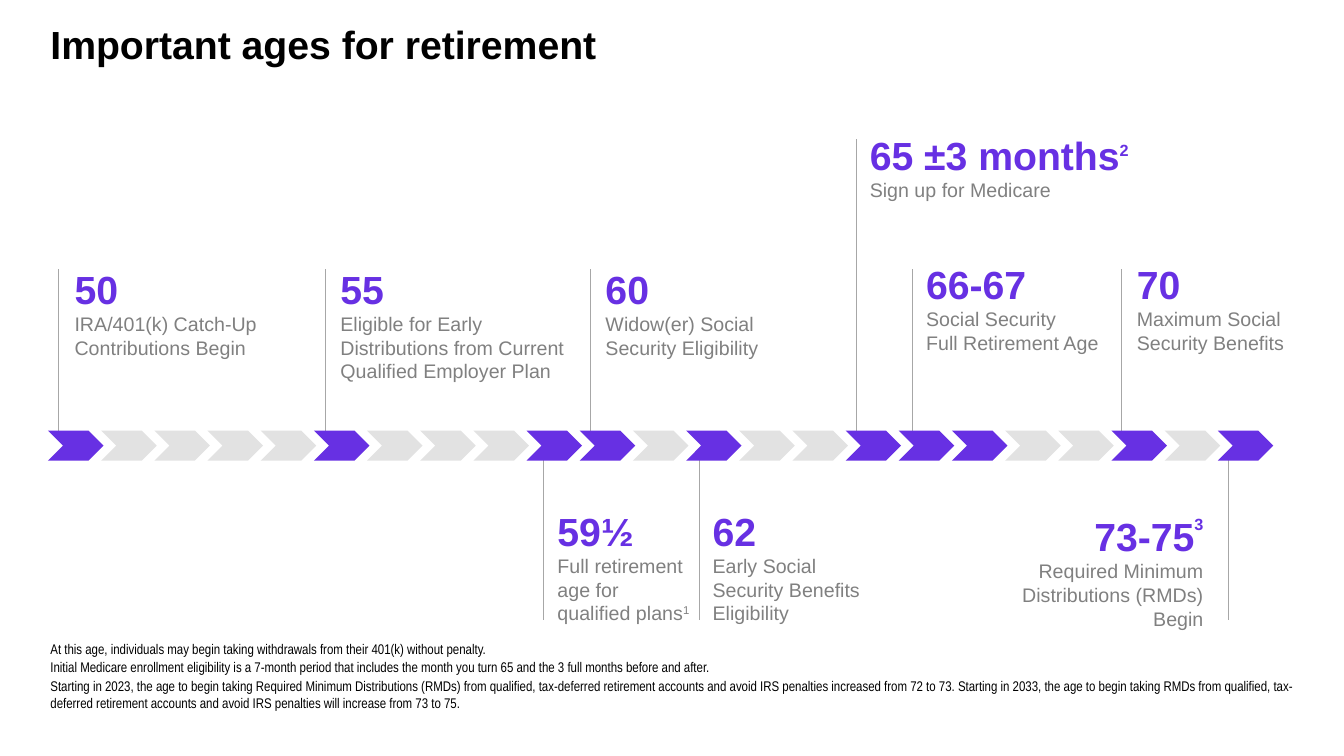
"""Build the slide about important ages for retirement."""
import dataclasses

import lxml.etree
import pptx
import pptx.dml.color
import pptx.enum.shapes
import pptx.enum.text
import pptx.oxml.ns
import pptx.util

Cm = pptx.util.Cm
Pt = pptx.util.Pt
Align = pptx.enum.text.PP_ALIGN
Anchor = pptx.enum.text.MSO_ANCHOR

PURPLE, LIGHT_GREY, LINE_GREY = "6730E3", "E2E2E2", "A7A7A7"
TEXT_GREY, BLACK, WHITE = "808080", "000000", "FFFFFF"
CHEVRON_COUNT, CHEVRON_LEFT, CHEVRON_TOP, CHEVRON_STEP = 23, 1.21, 10.85, 1.34
MARKED_CHEVRONS = {0, 5, 9, 10, 12, 15, 16, 17, 20, 22}
UPPER_TOP, MEDICARE_TOP, LOWER_TOP = 6.55, 3.18, 12.78
UPPER_LINE, LOWER_LINE, MEDICARE_LINE = (6.78, 10.85), (11.56, 15.62), (3.51, 10.97)


@dataclasses.dataclass
class Milestone:
    """An age on the timeline with its leader line and its label."""
    age: str
    description: str
    line_x: float
    line_span: tuple
    left: float
    top: float
    width: float
    boxed: bool = False
    age_mark: str = ""
    age_baseline: int = 50
    description_mark: str = ""
    alignment: Align = Align.LEFT


MILESTONES = [
    Milestone("50", "IRA/401(k) Catch-Up Contributions Begin",
              1.47, UPPER_LINE, 1.63, UPPER_TOP, 6.48),
    Milestone("55", "Eligible for Early Distributions from Current Qualified Employer Plan",
              8.2, UPPER_LINE, 8.33, UPPER_TOP, 6.76),
    Milestone("59½", "Full retirement age for qualified plans",
              13.69, LOWER_LINE, 14.05, LOWER_TOP, 3.4, boxed=True, description_mark="1"),
    Milestone("60", "Widow(er) Social Security Eligibility",
              14.88, UPPER_LINE, 15.01, UPPER_TOP, 4.95),
    Milestone("62", "Early Social Security Benefits Eligibility",
              17.63, LOWER_LINE, 17.96, LOWER_TOP, 3.96, boxed=True),
    Milestone("65 ±3 months", "Sign up for Medicare",
              21.59, MEDICARE_LINE, 21.67, MEDICARE_TOP, 7.49, age_mark="2"),
    Milestone("66-67", "Social Security \vFull Retirement Age",
              22.99, UPPER_LINE, 23.34, UPPER_TOP, 4.55, boxed=True),
    Milestone("70", "Maximum Social Security Benefits",
              28.27, UPPER_LINE, 28.65, UPPER_TOP, 4.32, boxed=True),
    Milestone("73-75", "Required Minimum Distributions (RMDs) Begin",
              30.96, LOWER_LINE, 25.17, LOWER_TOP, 5.41,
              age_mark="3", age_baseline=75, alignment=Align.RIGHT),
]

FOOTNOTES = [
    "At this age, individuals may begin taking withdrawals from their 401(k) without penalty.",
    "Initial Medicare enrollment eligibility is a 7-month period that includes the month "
    "you turn 65 and the 3 full months before and after.",
    "Starting in 2023, the age to begin taking Required Minimum Distributions (RMDs) from "
    "qualified, tax-deferred retirement accounts and avoid IRS penalties increased from 72 "
    "to 73. Starting in 2033, the age to begin taking RMDs from qualified, tax-deferred "
    "retirement accounts and avoid IRS penalties will increase from 73 to 75.",
]


def rgb(hex_colour):
    """Return the colour object for a hex string."""
    return pptx.dml.color.RGBColor.from_string(hex_colour)


def format_font(font, size, colour, bold=False, name="Arial"):
    """Set the face, size, weight and colour of a font."""
    font.name, font.size, font.bold = name, Pt(size), bold
    font.color.rgb = rgb(colour)


def set_frame(frame, inset_x=0, inset_y=0, anchor=Anchor.TOP):
    """Set wrapping, insets and anchor of a text frame."""
    frame.word_wrap = True
    frame.auto_size = pptx.enum.text.MSO_AUTO_SIZE.NONE
    frame.margin_left = frame.margin_right = Cm(inset_x)
    frame.margin_top = frame.margin_bottom = Cm(inset_y)
    frame.vertical_anchor = anchor


def fill_placeholder(placeholder, box, texts, anchor, space_after, **font_format):
    """Move a placeholder and fill it with plain left-aligned paragraphs."""
    placeholder.left, placeholder.top, placeholder.width, placeholder.height = map(Cm, box)
    frame = placeholder.text_frame
    frame.text = "\n".join(texts)
    set_frame(frame, anchor=anchor)
    for paragraph in frame.paragraphs:
        properties = paragraph._p.get_or_add_pPr()
        properties.set("marL", "0")
        properties.set("indent", "0")
        lxml.etree.SubElement(properties, pptx.oxml.ns.qn("a:buNone"))
        paragraph.alignment = Align.LEFT
        paragraph.space_before = Pt(0)
        paragraph.space_after = Pt(space_after)
        for run in paragraph.runs:
            format_font(run.font, **font_format)


def add_filled_shape(slide, kind, box, colour):
    """Add a flat preset shape without outline or shadow."""
    shape = slide.shapes.add_shape(kind, *map(Cm, box))
    shape.shadow.inherit = False
    shape.fill.solid()
    shape.fill.fore_color.rgb = rgb(colour)
    shape.line.fill.background()
    return shape


def add_leader_line(slide, x, span):
    """Add a thin vertical line between a label and the timeline."""
    top, bottom = span
    line = slide.shapes.add_connector(
        pptx.enum.shapes.MSO_CONNECTOR.STRAIGHT, Cm(x), Cm(bottom), Cm(x), Cm(top))
    line.line.color.rgb = rgb(LINE_GREY)
    line.line.width = Pt(1)
    lxml.etree.SubElement(line._element.spPr, pptx.oxml.ns.qn("a:effectLst"))


def write_marked_text(paragraph, text, mark, mark_size, baseline, size, colour, bold):
    """Write a paragraph that may end in a superscript footnote mark."""
    paragraph.text = text
    for run in paragraph.runs:
        format_font(run.font, size, colour, bold)
    if mark:
        run = paragraph.add_run()
        run.text = mark
        format_font(run.font, mark_size, colour, bold)
        run._r.get_or_add_rPr().set("baseline", str(baseline * 1000))


def add_label(slide, milestone):
    """Add the age and description of a milestone."""
    box = (milestone.left, milestone.top, milestone.width, 3.3)
    if milestone.boxed:
        rectangle = pptx.enum.shapes.MSO_SHAPE.RECTANGLE
        frame = add_filled_shape(slide, rectangle, box, WHITE).text_frame
        set_frame(frame)
    else:
        frame = slide.shapes.add_textbox(*map(Cm, box)).text_frame
        set_frame(frame, inset_x=0.25, inset_y=0.13)
    age, description = frame.paragraphs[0], frame.add_paragraph()
    write_marked_text(age, milestone.age, milestone.age_mark, 20,
                      milestone.age_baseline, 28, PURPLE, True)
    write_marked_text(description, milestone.description, milestone.description_mark, 14,
                      30, 14, TEXT_GREY, False)
    age.alignment = description.alignment = milestone.alignment


def add_timeline(slide):
    """Add the row of chevrons, one per step, with key ages in purple."""
    for index in range(CHEVRON_COUNT):
        left = CHEVRON_LEFT + index * CHEVRON_STEP
        colour = PURPLE if index in MARKED_CHEVRONS else LIGHT_GREY
        add_filled_shape(slide, pptx.enum.shapes.MSO_SHAPE.CHEVRON,
                         (left, CHEVRON_TOP, 1.4, 0.76), colour)


def main():
    """Build the slide and save it."""
    presentation = pptx.Presentation()
    presentation.slide_width, presentation.slide_height = Cm(33.87), Cm(19.05)
    slide = presentation.slides.add_slide(presentation.slide_layouts[1])
    title, footnotes = slide.placeholders
    fill_placeholder(title, (1.27, 0.51, 24.13, 2.16), ["Important ages for retirement"],
                     Anchor.TOP, 8, size=28, colour=BLACK, bold=True)
    fill_placeholder(footnotes, (1.27, 15.57, 31.32, 2.36), FOOTNOTES,
                     Anchor.BOTTOM, 1.5, size=10, colour=BLACK, name="Arial Narrow")
    for milestone in MILESTONES:
        add_leader_line(slide, milestone.line_x, milestone.line_span)
        add_label(slide, milestone)
    add_timeline(slide)
    presentation.save("out.pptx")


if __name__ == "__main__":
    main()
